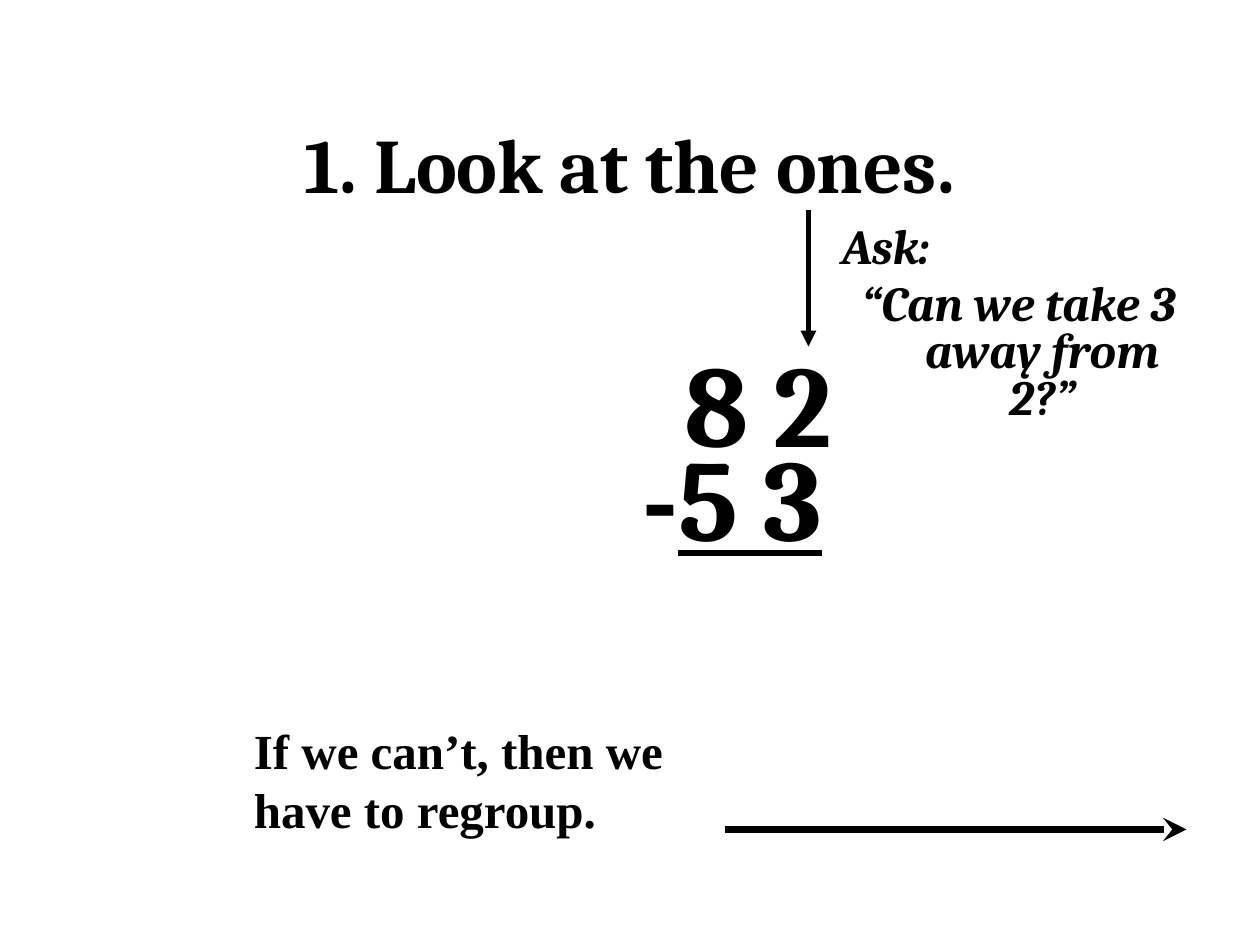
"""Build the subtraction slide about looking at the ones."""
from dataclasses import dataclass

from lxml.etree import SubElement
from pptx import Presentation
from pptx.dml.color import RGBColor
from pptx.enum.shapes import MSO_CONNECTOR
from pptx.enum.text import MSO_ANCHOR, PP_ALIGN
from pptx.oxml.ns import qn
from pptx.slide import Slide
from pptx.text.text import TextFrame
from pptx.util import Emu, Pt

PX = 9525
BLACK = RGBColor(0, 0, 0)
WHITE = RGBColor(255, 255, 255)
SERIF = "Cambria"
PLAIN_SERIF = "Times New Roman"


@dataclass(frozen=True)
class Box:
    """A rectangle in px."""
    left: int
    top: int
    width: int
    height: int

    def emu(self) -> tuple[Emu, ...]:
        """Return the rectangle in EMU."""
        return tuple(Emu(n * PX) for n in (self.left, self.top, self.width, self.height))


@dataclass(frozen=True)
class Arrow:
    """A straight arrow between two points in px."""
    start: tuple[int, int]
    end: tuple[int, int]
    weight: float
    head: str


ARROWS = (
    Arrow((616, 160), (616, 264), 3, "triangle"),
    Arrow((552, 632), (904, 632), 4.5, "stealth"),
)


def write(frame: TextFrame, text: str, *, size: int, font: str = SERIF,
          italic: bool = False, underlined: str = "",
          align: PP_ALIGN = PP_ALIGN.LEFT, hanging: int = 0,
          line_spacing: float = 1.0, space_before: float = 0) -> None:
    """Write one bold paragraph, ending in an optional underlined part."""
    paragraph = frame.paragraphs[0] if not frame.text else frame.add_paragraph()
    paragraph.alignment = align
    paragraph.line_spacing = line_spacing
    paragraph.space_before = Pt(space_before)
    if hanging:
        properties = paragraph._p.get_or_add_pPr()
        properties.set("marL", str(hanging * PX))
        properties.set("indent", str(-hanging * PX))
    for part, underline in ((text, None), (underlined, True)):
        if part:
            run = paragraph.add_run()
            run.text = part
            run.font.name = font
            run.font.size = Pt(size)
            run.font.bold = True
            run.font.italic = italic
            run.font.underline = underline
            run.font.color.rgb = BLACK


def add_frame(slide: Slide, box: Box) -> TextFrame:
    """Add a wrapping text box and return its frame."""
    frame = slide.shapes.add_textbox(*box.emu()).text_frame
    frame.word_wrap = True
    return frame


def add_arrow(slide: Slide, arrow: Arrow) -> None:
    """Draw an arrow without a shadow."""
    ends = (Emu(n * PX) for n in arrow.start + arrow.end)
    connector = slide.shapes.add_connector(MSO_CONNECTOR.STRAIGHT, *ends)
    connector.line.color.rgb = BLACK
    connector.line.width = Pt(arrow.weight)
    SubElement(connector.line._get_or_add_ln(), qn("a:tailEnd"), type=arrow.head)
    SubElement(connector._element.spPr, qn("a:effectLst"))


def main() -> None:
    """Build and save the slide."""
    deck = Presentation()
    deck.slide_width, deck.slide_height = Emu(960 * PX), Emu(720 * PX)
    slide = deck.slides.add_slide(deck.slide_layouts[5])
    slide.background.fill.solid()
    slide.background.fill.fore_color.rgb = WHITE

    title = slide.shapes.title
    title.left, title.top, title.width, title.height = Box(72, 64, 816, 120).emu()
    title.text_frame.vertical_anchor = MSO_ANCHOR.MIDDLE
    write(title.text_frame, "1. Look at the ones.", size=44, align=PP_ALIGN.CENTER)

    question = add_frame(slide, Box(632, 168, 288, 128))
    write(question, "Ask:", size=28, italic=True, hanging=36, line_spacing=0.8)
    write(question, "“Can we take 3 away from 2?”", size=28, italic=True,
          align=PP_ALIGN.CENTER, hanging=36, line_spacing=0.8, space_before=5.6)

    minuend = add_frame(slide, Box(512, 248, 136, 115))
    write(minuend, "8 2", size=66)
    subtrahend = add_frame(slide, Box(480, 320, 168, 115))
    write(subtrahend, "-", underlined="5 3", size=66)

    conclusion = add_frame(slide, Box(184, 544, 360, 99))
    write(conclusion, "If we can’t, then we have to regroup.", size=28, font=PLAIN_SERIF)

    for arrow in ARROWS:
        add_arrow(slide, arrow)
    deck.save("out.pptx")


if __name__ == "__main__":
    main()
